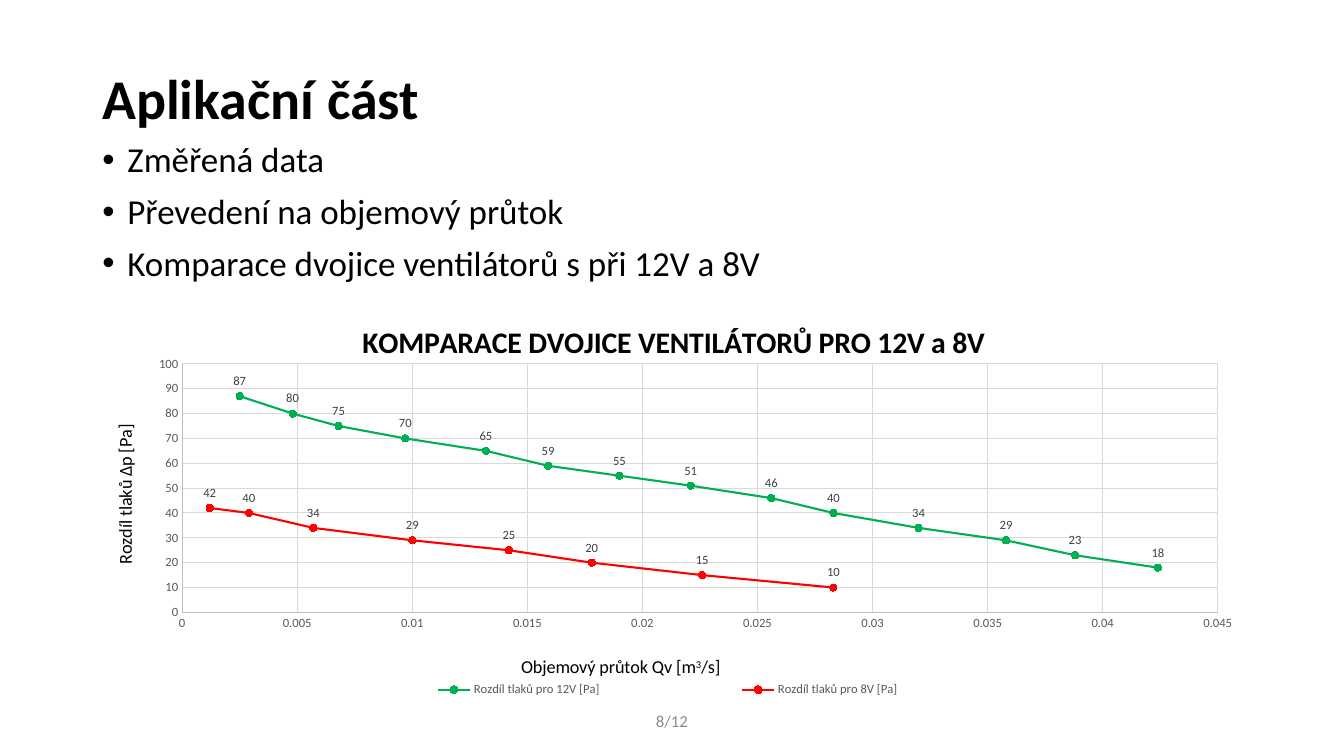
from lxml import etree
from pptx import Presentation
from pptx import util as u
from pptx.chart.data import XyChartData
from pptx.chart.datalabel import DataLabels
from pptx.dml.color import RGBColor
from pptx.enum import chart as ch, text
from pptx.oxml import ns

PX = 9525
FONT = "Calibri"
BLACK, GREY, LABEL_GREY = "000000", "595959", "404040"
AXIS_LINE, GRID_LINE = "BFBFBF", "D9D9D9"

BULLETS = [
    "Změřená data",
    "Převedení na objemový průtok",
    "Komparace dvojice ventilátorů s při 12V a 8V",
]
# Name, colour, (flow, pressure difference) points
FANS = [
    ("Rozdíl tlaků pro 12V [Pa]", "00B050", [
        (0.0424, 18), (0.0388, 23), (0.0358, 29), (0.032, 34), (0.0283, 40),
        (0.0256, 46), (0.0221, 51), (0.019, 55), (0.0159, 59), (0.0132, 65),
        (0.0097, 70), (0.0068, 75), (0.0048, 80), (0.0025, 87)]),
    ("Rozdíl tlaků pro 8V [Pa]", "FF0000", [
        (0.0283, 10), (0.0226, 15), (0.0178, 20), (0.0142, 25),
        (0.01, 29), (0.0057, 34), (0.0029, 40), (0.0012, 42)]),
]


def px(*lengths):
    return [u.Emu(length * PX) for length in lengths]


def rgb(color):
    return RGBColor.from_string(color)


def set_font(font, size, color=BLACK, bold=False):
    font.name, font.size, font.bold = FONT, u.Pt(size), bold
    font.color.rgb = rgb(color)


def set_line(line, color, width):
    line.color.rgb = rgb(color)
    line.width = u.Pt(width)


def add_bullet(paragraph):
    properties = paragraph._p.get_or_add_pPr()
    properties.set("marL", str(24 * PX))
    properties.set("indent", str(-24 * PX))
    for tag, attribute, value in (("a:buFont", "typeface", "Arial"),
                                  ("a:buChar", "char", "•")):
        etree.SubElement(properties, ns.qn(tag)).set(attribute, value)


def add_text(slide, box, lines, size, color=BLACK, bold=False, bullets=False,
             align=text.PP_ALIGN.LEFT, anchor=text.MSO_ANCHOR.MIDDLE,
             line_spacing=0.9):
    frame = slide.shapes.add_textbox(*px(*box)).text_frame
    frame.word_wrap = True
    frame.vertical_anchor = anchor
    for index, line in enumerate(lines):
        paragraph = frame.add_paragraph() if index else frame.paragraphs[0]
        paragraph.alignment = align
        paragraph.line_spacing = line_spacing
        paragraph.space_before = u.Pt(10 if index else 0)
        if bullets:
            add_bullet(paragraph)
        run = paragraph.add_run()
        run.text = line
        set_font(run.font, size, color, bold)


def place(element, inner=False, **fractions):
    """Give a chart part a fixed place, in fractions of the chart."""
    layout = element.find(ns.qn("c:layout"))
    if layout is None:
        layout = etree.Element(ns.qn("c:layout"))
        overlay = element.find(ns.qn("c:overlay"))
        if overlay is None:
            element.insert(0, layout)
        else:
            overlay.addprevious(layout)
    manual = etree.SubElement(layout, ns.qn("c:manualLayout"))
    settings = {"layoutTarget": "inner"} if inner else {}
    settings.update(xMode="edge", yMode="edge", **fractions)
    for name, value in settings.items():
        etree.SubElement(manual, ns.qn("c:" + name)).set("val", str(value))


def set_title(title, pieces, size, x, y, bold=False):
    """Write a chart or axis title; every second piece is superscript."""
    paragraph = title.text_frame.paragraphs[0]
    for index, piece in enumerate(pieces):
        run = paragraph.add_run()
        run.text = piece
        set_font(run.font, size, BLACK, bold)
        if index % 2:
            run.font._element.set("baseline", "30000")
    place(title._element, x=x, y=y)


def style_axis(axis, maximum, step):
    axis.minimum_scale, axis.maximum_scale, axis.major_unit = 0, maximum, step
    axis.major_tick_mark = axis.minor_tick_mark = ch.XL_TICK_MARK.NONE
    axis.has_major_gridlines = True
    set_line(axis.major_gridlines.format.line, GRID_LINE, 0.75)
    set_line(axis.format.line, AXIS_LINE, 0.75)
    set_font(axis.tick_labels.font, 9, GREY)


def style_series(series, color):
    series.smooth = False
    set_line(series.format.line, color, 1.5)
    marker = series.marker
    marker.style, marker.size = ch.XL_MARKER_STYLE.CIRCLE, 5
    marker.format.fill.solid()
    marker.format.fill.fore_color.rgb = rgb(color)
    set_line(marker.format.line, color, 0.75)
    labels = DataLabels(series._element.get_or_add_dLbls())
    set_font(labels.font, 9, LABEL_GREY)
    labels.position = ch.XL_LABEL_POSITION.ABOVE
    labels.show_value = True


def add_fan_chart(slide, box):
    data = XyChartData()
    for name, _, points in FANS:
        series = data.add_series(name)
        for flow, pressure in points:
            series.add_data_point(flow, pressure)
    chart = slide.shapes.add_chart(
        ch.XL_CHART_TYPE.XY_SCATTER_LINES, *px(*box), data).chart
    set_font(chart.font, 10)
    chart.plots[0].vary_by_categories = False
    for series, (_, color, _) in zip(chart.plots[0].series, FANS):
        style_series(series, color)

    chart.has_title = True
    set_title(chart.chart_title, ["KOMPARACE DVOJICE VENTILÁTORŮ PRO 12V a 8V"],
              21.3, x=0.23, y=0.05, bold=True)
    flow_axis, pressure_axis = chart.category_axis, chart.value_axis
    style_axis(flow_axis, 0.045, 0.005)
    style_axis(pressure_axis, 100, 10)
    set_title(flow_axis.axis_title, ["Objemový průtok Qv [m", "3", "/s]"],
              13, x=0.37, y=0.85)
    set_title(pressure_axis.axis_title, ["Rozdíl tlaků ∆p [Pa]"],
              13, x=0.015, y=0.3)
    body = pressure_axis.axis_title.text_frame._txBody.bodyPr
    body.set("rot", "-5400000")
    body.set("vert", "horz")

    chart.has_legend = True
    chart.legend.position = ch.XL_LEGEND_POSITION.BOTTOM
    chart.legend.include_in_layout = False
    set_font(chart.legend.font, 9, GREY)
    place(chart.legend._element, x=0.18, y=0.91, w=0.64, h=0.06)
    place(chart._chartSpace.chart.plotArea, inner=True,
          x=0.078, y=0.164, w=0.9, h=0.592)


def main():
    presentation = Presentation()
    presentation.slide_width, presentation.slide_height = px(1280, 720)
    slide = presentation.slides.add_slide(presentation.slide_layouts[6])
    add_text(slide, (88, 38, 1104, 118), ["Aplikační část"], 40, bold=True)
    add_text(slide, (88, 131, 1104, 457), BULLETS, 25, bullets=True,
             anchor=text.MSO_ANCHOR.TOP)
    add_text(slide, (424, 667, 432, 38), ["8/12"], 12, "8C8C8C",
             align=text.PP_ALIGN.CENTER, line_spacing=1.0)
    add_fan_chart(slide, (88, 281, 1096, 400))
    presentation.save("out.pptx")


if __name__ == "__main__":
    main()
